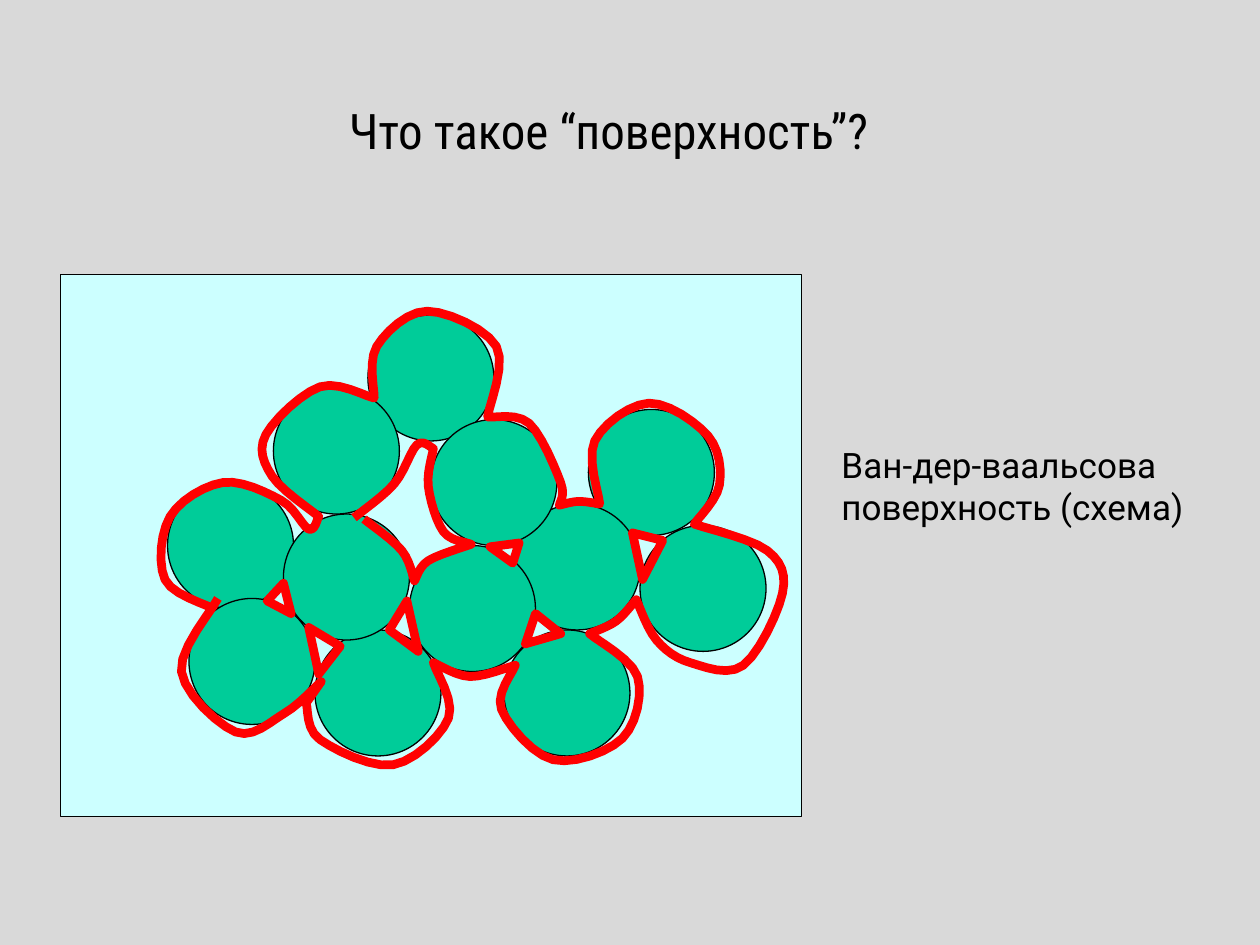
from dataclasses import dataclass

from pptx import Presentation
from pptx.dml.color import RGBColor
from pptx.enum.shapes import MSO_SHAPE as Shape
from pptx.enum.text import MSO_ANCHOR as Anchor, PP_ALIGN as Align
from pptx.util import Pt

PX = 9144  # EMU per px, 100 px to the inch


@dataclass(frozen=True)
class Theme:
    background: str = "D9D9D9"
    panel: str = "CCFFFF"
    atom: str = "00CC99"
    outline: str = "000000"
    surface: str = "FF0000"
    text: str = "000000"
    title_font: str = "Roboto Condensed"
    body_font: str = "Roboto"
    title_size: int = 28
    body_size: int = 20
    outline_width: float = 0.75
    surface_width: float = 5


THEME = Theme()

ATOM_SIZE = 100
ATOMS = [
    (508, 417), (400, 500), (133, 383), (250, 500), (150, 475), (467, 325),
    (408, 400), (292, 250), (225, 408), (325, 433), (217, 308), (342, 333),
]
# Each lobe is smooth and ends in a cusp where the next one starts.
OUTER_LOBES = [
    [(169, 483), (131, 460), (135, 410), (177, 383), (223, 397), (245, 420)],
    [(253, 410), (216, 378), (211, 345), (254, 307)],
    [(297, 316), (299, 275), (339, 247), (394, 275)],
    [(387, 331), (420, 336), (445, 383)],
    [(444, 401), (459, 398)],
    [(476, 400), (472, 350), (515, 320), (562, 346), (571, 385)],
    [(551, 416), (609, 437), (621, 471), (590, 528), (548, 526), (521, 508)],
    [(505, 476), (489, 493)],
    [(468, 503), (506, 537), (494, 586), (439, 603), (398, 563)],
    [(409, 528), (373, 537)],
    [(344, 526), (356, 570), (312, 607), (254, 587)],
    [(243, 558)],
    [(255, 541), (226, 566), (187, 581), (144, 533)],
    [(173, 475)],
]
LARGE_CAVITY_LOBES = [
    [(281, 411), (313, 384), (331, 353)],
    [(344, 356), (340, 386), (352, 422)],
    [(374, 432), (340, 445)],
    [(329, 461), (319, 437)],
    [(289, 412)],
]
SMALL_CAVITIES = [
    [(309, 500), (323, 477), (332, 517)],
    [(425, 487), (417, 511), (445, 503)],
    [(502, 423), (526, 429), (510, 460)],
    [(225, 463), (212, 477), (231, 487)],
    [(245, 498), (253, 535), (270, 513)],
    [(389, 434), (412, 431), (407, 447)],
]
CURVE_STEPS = 6


def rgb(value):
    return RGBColor.from_string(value)


def smooth(points):
    """Return points on a Catmull-Rom curve, without the last point."""
    padded = [points[0], *points, points[-1]]
    curve = []
    for before, start, end, after in zip(padded, padded[1:], padded[2:], padded[3:]):
        for step in range(CURVE_STEPS):
            t = step / CURVE_STEPS
            curve.append(tuple(
                b + ((c - a) * t + (2 * a - 5 * b + 4 * c - d) * t ** 2
                     + (3 * b - a - 3 * c + d) * t ** 3) / 2
                for a, b, c, d in zip(before, start, end, after)))
    return curve


def join_lobes(lobes):
    points = []
    for lobe, following in zip(lobes, lobes[1:]):
        points += smooth([*lobe, following[0]])
    return points + lobes[-1]


def set_line(shape, color, width):
    shape.line.color.rgb = rgb(color)
    shape.line.width = Pt(width)
    shape.shadow.inherit = False


def add_filled_shape(slide, kind, box, fill):
    shape = slide.shapes.add_shape(kind, *(length * PX for length in box))
    shape.fill.solid()
    shape.fill.fore_color.rgb = rgb(fill)
    set_line(shape, THEME.outline, THEME.outline_width)
    return shape


def add_surface_line(slide, points, close=False):
    """Draw an unfilled red stroke through the points."""
    start, *rest = [(round(x * PX), round(y * PX)) for x, y in points]
    builder = slide.shapes.build_freeform(*start)
    builder.add_line_segments(rest, close=close)
    shape = builder.convert_to_shape()
    shape.fill.background()
    set_line(shape, THEME.surface, THEME.surface_width)


def add_text(slide, box, text, font_name, size, anchor=Anchor.TOP):
    text_box = slide.shapes.add_textbox(*(length * PX for length in box))
    frame = text_box.text_frame
    frame.word_wrap = True
    frame.vertical_anchor = anchor
    paragraph = frame.paragraphs[0]
    run = paragraph.add_run()
    run.text = text
    run.font.name = font_name
    run.font.size = Pt(size)
    run.font.color.rgb = rgb(THEME.text)
    return paragraph


def main():
    presentation = Presentation()
    presentation.slide_width = 1000 * PX
    presentation.slide_height = 750 * PX
    slide = presentation.slides.add_slide(presentation.slide_layouts[6])
    slide.background.fill.solid()
    slide.background.fill.fore_color.rgb = rgb(THEME.background)

    title = add_text(slide, (58, 67, 850, 78), "Что такое “поверхность”?",
                     THEME.title_font, THEME.title_size, Anchor.MIDDLE)
    title.alignment = Align.CENTER
    title.line_spacing = 0.93

    panel = add_filled_shape(slide, Shape.ROUNDED_RECTANGLE,
                             (48, 218, 588, 430), THEME.panel)
    panel.adjustments[0] = 0
    for left, top in ATOMS:
        add_filled_shape(slide, Shape.OVAL,
                         (left, top, ATOM_SIZE, ATOM_SIZE), THEME.atom)
    for lobes in (OUTER_LOBES, LARGE_CAVITY_LOBES):
        add_surface_line(slide, join_lobes(lobes))
    for corners in SMALL_CAVITIES:
        add_surface_line(slide, corners, close=True)

    add_text(slide, (658, 347, 315, 172),
             "Ван-дер-ваальсова поверхность (схема)",
             THEME.body_font, THEME.body_size)
    presentation.save("out.pptx")


if __name__ == "__main__":
    main()
